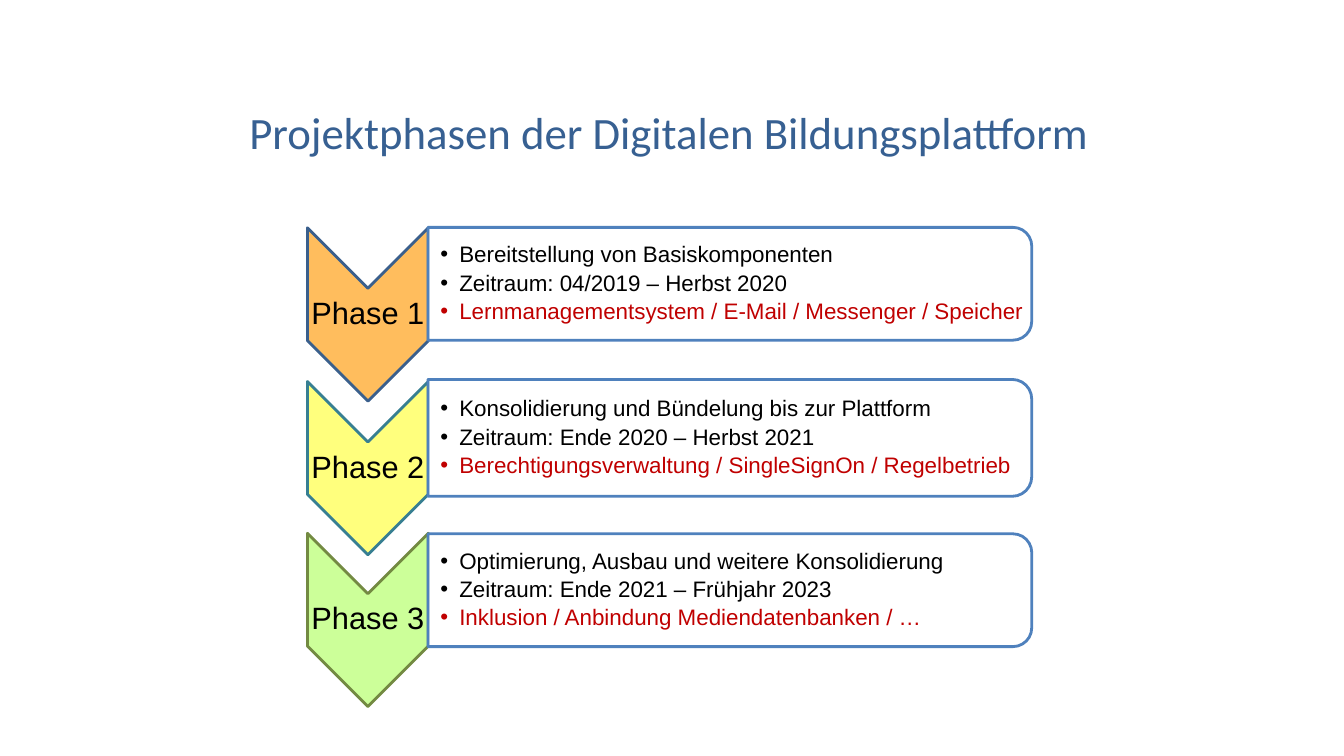
from pptx import Presentation
from pptx.dml.color import RGBColor
from pptx.enum.shapes import MSO_SHAPE
from pptx.enum.text import MSO_ANCHOR, MSO_AUTO_SIZE, PP_ALIGN
from pptx.oxml.ns import qn
from pptx.util import Pt
from lxml.etree import SubElement

THEME = {
    "title": "376092", "text": "000000", "accent": "C00000",
    "panel": "FFFFFF", "panel_line": "4F81BD",
    "title_size": 32, "phase_size": 22, "list_size": 16,
    "title_font": "Calibri", "body_font": "Arial",
}

PHASES = [
    ("FFBD5D", "3A5F8C", 224.6, 202.7, 80.6, [
        "Bereitstellung von Basiskomponenten",
        "Zeitraum: 04/2019 – Herbst 2020",
        "Lernmanagementsystem / E-Mail / Messenger / Speicher"]),
    ("FFFF7D", "377F92", 334.4, 312.8, 83.5, [
        "Konsolidierung und Bündelung bis zur Plattform",
        "Zeitraum: Ende 2020 – Herbst 2021",
        "Berechtigungsverwaltung / SingleSignOn / Regelbetrieb"]),
    ("CCFF99", "738A42", 442.8, 421.6, 80.6, [
        "Optimierung, Ausbau und weitere Konsolidierung",
        "Zeitraum: Ende 2021 – Frühjahr 2023",
        "Inklusion / Anbindung Mediendatenbanken / …"]),
]

CHEVRON_MIDDLE, CHEVRON_LENGTH, CHEVRON_WIDTH = 262.8, 123.8, 86.4
PANEL_MIDDLE, PANEL_LENGTH = 521.3, 431.3


def add_turned(page, kind, middle_x, middle_y, width, height, fill, line):
    shape = page.shapes.add_shape(kind, Pt(middle_x - width / 2), Pt(middle_y - height / 2),
                                  Pt(width), Pt(height))
    shape.rotation = 90
    shape.shadow.inherit = False
    shape.fill.solid()
    shape.fill.fore_color.rgb = RGBColor.from_string(fill)
    shape.line.color.rgb = RGBColor.from_string(line)
    shape.line.width = Pt(2)
    return shape


def style(para, font, size, color):
    for span in para.runs:
        span.font.name = font
        span.font.size = Pt(size)
        span.font.bold = False
        span.font.color.rgb = RGBColor.from_string(color)


deck = Presentation()
deck.slide_width, deck.slide_height = Pt(960), Pt(540)
page = deck.slides.add_slide(deck.slide_layouts.get_by_name("Comparison"))

title = page.shapes.title
title.left, title.top, title.width, title.height = Pt(167), Pt(71.3), Pt(622), Pt(46)
title.text_frame.text = "Projektphasen der Digitalen Bildungsplattform"
title.text_frame.word_wrap = False
title.text_frame.auto_size = MSO_AUTO_SIZE.SHAPE_TO_FIT_TEXT
title.text_frame.paragraphs[0].alignment = PP_ALIGN.CENTER
style(title.text_frame.paragraphs[0], THEME["title_font"], THEME["title_size"], THEME["title"])

tree = title.element.getparent()
*lists, spare = [holder for holder in page.placeholders if holder.placeholder_format.idx in (1, 2, 3, 4)]
tree.remove(spare.element)

for number, (phase, box) in enumerate(zip(PHASES, lists), 1):
    fill, line, chevron_y, panel_y, panel_height, items = phase

    add_turned(page, MSO_SHAPE.CHEVRON, CHEVRON_MIDDLE, chevron_y,
               CHEVRON_LENGTH, CHEVRON_WIDTH, fill, line)

    label = page.shapes.add_textbox(Pt(CHEVRON_MIDDLE - CHEVRON_WIDTH / 2), Pt(chevron_y - 18.7),
                                    Pt(CHEVRON_WIDTH), Pt(37.4))
    frame = label.text_frame
    frame.text = f"Phase {number}"
    frame.word_wrap = True
    frame.vertical_anchor = MSO_ANCHOR.MIDDLE
    frame.margin_left = frame.margin_right = frame.margin_top = frame.margin_bottom = Pt(1.4)
    para = frame.paragraphs[0]
    para.alignment = PP_ALIGN.CENTER
    para.line_spacing = 0.9
    style(para, THEME["body_font"], THEME["phase_size"], THEME["text"])

    panel = add_turned(page, MSO_SHAPE.ROUND_2_SAME_RECTANGLE, PANEL_MIDDLE, panel_y,
                       panel_height, PANEL_LENGTH, THEME["panel"], THEME["panel_line"])
    panel_color = panel.element.spPr.find(qn("a:solidFill")).find(qn("a:srgbClr"))
    SubElement(panel_color, qn("a:alpha"), val="90000")

    tree.append(box.element)
    list_height = panel_height - 7.9
    box.left, box.top = Pt(306), Pt(panel_y - list_height / 2)
    box.width, box.height = Pt(427.5), Pt(list_height)
    frame = box.text_frame
    frame.text = "\n".join(items)
    frame.word_wrap = True
    frame.auto_size = MSO_AUTO_SIZE.NONE
    frame.vertical_anchor = MSO_ANCHOR.MIDDLE
    frame.margin_left = Pt(8.6)
    frame.margin_right = frame.margin_top = frame.margin_bottom = Pt(0.7)
    for para in frame.paragraphs:
        para.level = 1
        para.alignment = PP_ALIGN.LEFT
        para.line_spacing = 0.9
        para.space_before = Pt(0)
        para.space_after = Pt(3)
        settings = para._p.get_or_add_pPr()
        settings.set("marL", str(Pt(13.5)))
        settings.set("indent", str(Pt(-13.5)))
        SubElement(settings, qn("a:buFont"), typeface=THEME["body_font"])
        SubElement(settings, qn("a:buChar"), char="•")
        style(para, THEME["body_font"], THEME["list_size"], THEME["text"])
    style(frame.paragraphs[-1], THEME["body_font"], THEME["list_size"], THEME["accent"])

deck.save("out.pptx")
